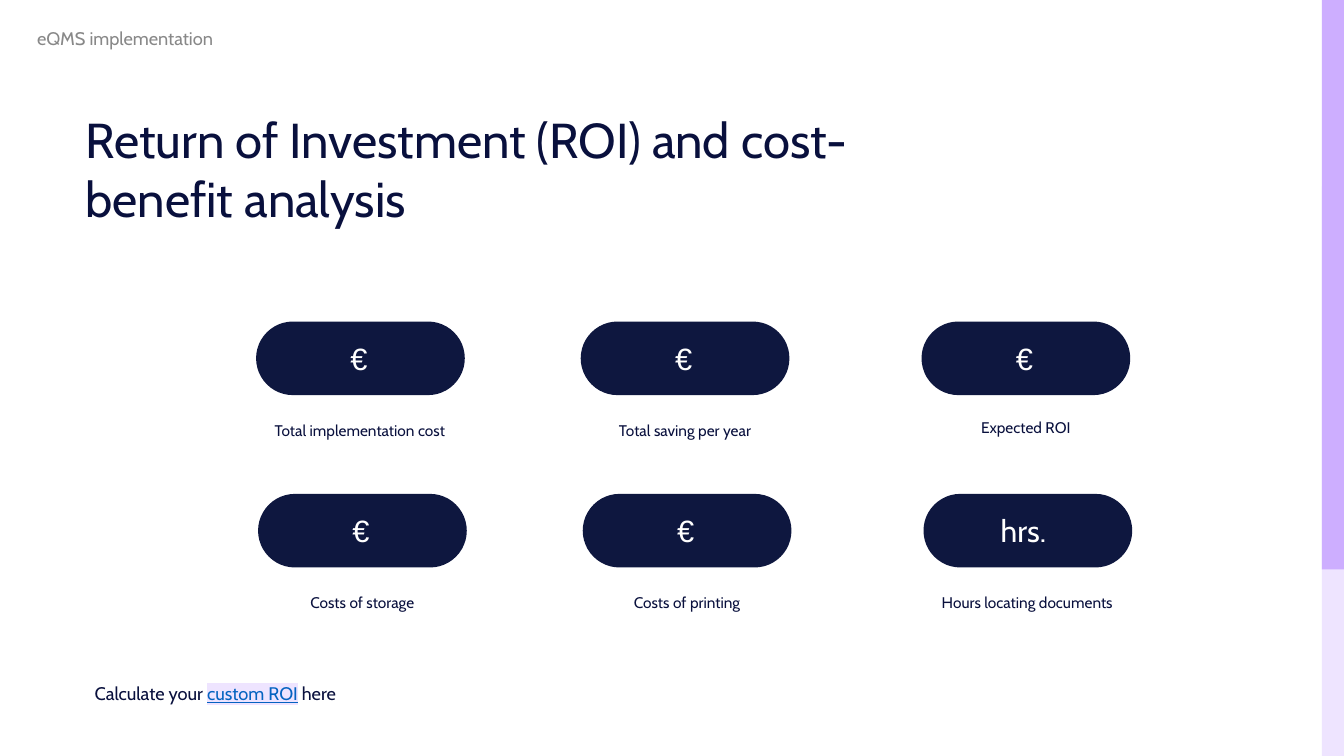
from lxml.etree import SubElement
from pptx import Presentation
from pptx.dml.color import RGBColor
from pptx.enum.shapes import MSO_SHAPE
from pptx.enum.text import MSO_ANCHOR, PP_ALIGN
from pptx.oxml.ns import qn
from pptx.util import Emu, Pt

PX = 9144  # EMU per px, 100 px to the inch
COLORS = {
    "ink": "09103D", "pill": "0E173F", "white": "FFFFFF", "grey": "888888",
    "link": "0563C1", "violet": "CDAEFF", "lilac": "EEE4FF",
}

SECTION = "eQMS implementation"
TITLE = "Return of Investment (ROI) and cost-benefit analysis"
# text, colour, highlighted and underlined
FOOTER = [("Calculate your ", "ink", False), ("custom ROI", "link", True),
          (" here", "ink", False)]
SIDE_BARS = [(185, "lilac"), (0, "violet")]

# value, value font, label, label width, label line spacing
ROWS = [
    [("€", "Arial", "Total implementation cost", 236, 1.15),
     ("€", "Arial", "Total saving per year", 207, 1.15),
     ("€", "Arial", "Expected ROI", 207, 1.0)],
    [("€", "Arial", "Costs of storage", 207, 1.15),
     ("€", "Arial", "Costs of printing", 207, 1.15),
     ("hrs.", "Cabin", "Hours locating documents", 236, 1.15)],
]
COLUMN_LEFTS = [254, 576, 914]
TOP, ROW_STEP, ROW_SHIFT = 319, 171, 2
PILL_W, PILL_H = 207, 73
VALUE_W, VALUE_H = 172, 47
LABEL_DROP, LABEL_H = 91, 29


def rgb(name):
    return RGBColor.from_string(COLORS[name])


def add_block(slide, kind, box, color):
    sp = slide.shapes.add_shape(kind, *(Emu(v * PX) for v in box))
    sp.shadow.inherit = False
    sp.fill.solid()
    sp.fill.fore_color.rgb = rgb(color)
    sp.line.fill.background()
    return sp


def add_text(slide, box, runs, size, font="Cabin", align=PP_ALIGN.LEFT,
             spacing=1.0, anchor=MSO_ANCHOR.TOP, margin_y=5):
    """Add a one-paragraph text box; runs hold (text, colour, marked)."""
    tf = slide.shapes.add_textbox(*(Emu(v * PX) for v in box)).text_frame
    tf.word_wrap = True
    tf.vertical_anchor = anchor
    tf.margin_left = tf.margin_right = Emu(10 * PX)
    tf.margin_top = tf.margin_bottom = Emu(margin_y * PX)
    p = tf.paragraphs[0]
    p.alignment = align
    p.line_spacing = spacing
    for text, color, marked in runs:
        r = p.add_run()
        r.text = text
        r.font.size = Pt(size)
        r.font.color.rgb = rgb(color)
        if marked:
            r.font.underline = True
            highlight = SubElement(r.font._element, qn("a:highlight"))
            SubElement(highlight, qn("a:srgbClr"), val=COLORS["lilac"])
        r.font.name = font


def add_metric(slide, left, top, value, font, label, label_w, spacing):
    pill = add_block(slide, MSO_SHAPE.ROUNDED_RECTANGLE,
                     (left, top, PILL_W, PILL_H), "pill")
    pill.adjustments[0] = 0.5
    label_left = left + (PILL_W - label_w) // 2
    add_text(slide, (label_left, top + LABEL_DROP, label_w, LABEL_H),
             [(label, "ink", False)], 11, align=PP_ALIGN.CENTER, spacing=spacing)
    value_left = left + (PILL_W - VALUE_W) // 2 - 1
    if font == "Cabin":
        value_left -= 3
    add_text(slide, (value_left, top + (PILL_H - VALUE_H) // 2, VALUE_W, VALUE_H),
             [(value, "white", False)], 22, font, PP_ALIGN.CENTER)


def main():
    prs = Presentation()
    prs.slide_width, prs.slide_height = Emu(1333 * PX), Emu(750 * PX)
    slide = prs.slides.add_slide(prs.slide_layouts[6])

    for top, color in SIDE_BARS:
        add_block(slide, MSO_SHAPE.RECTANGLE, (1311, top, 22, 565), color)
    add_text(slide, (27, 17, 216, 40), [(SECTION, "grey", False)], 13, margin_y=10)
    for i, row in enumerate(ROWS):
        for left, metric in zip(COLUMN_LEFTS, row):
            add_metric(slide, left + i * ROW_SHIFT, TOP + i * ROW_STEP, *metric)
    add_text(slide, (84, 661, 1017, 54), FOOTER, 13, anchor=MSO_ANCHOR.MIDDLE)
    add_text(slide, (75, 104, 892, 128), [(TITLE, "ink", False)], 35)

    prs.save("out.pptx")


if __name__ == "__main__":
    main()
